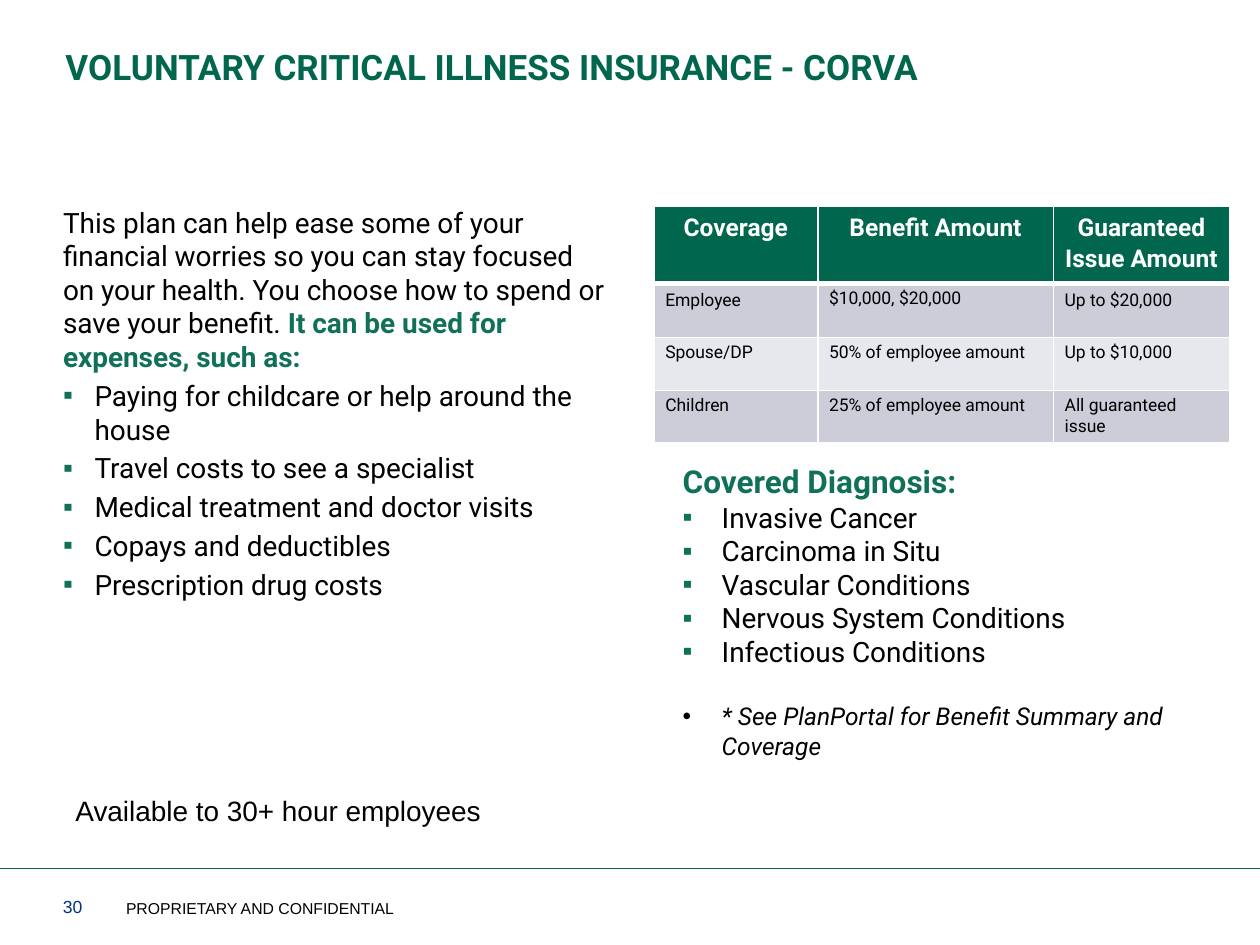
from dataclasses import dataclass
from typing import Optional

from lxml.etree import SubElement
from pptx import Presentation
from pptx.dml.color import RGBColor
from pptx.enum.shapes import MSO_CONNECTOR
from pptx.enum.text import MSO_ANCHOR, PP_ALIGN
from pptx.oxml.ns import qn
from pptx.util import Inches, Pt


@dataclass(frozen=True)
class Theme:
    font: str = "Roboto"
    plain_font: str = "Arial"
    green: str = "00664D"
    accent: str = "117158"
    blue: str = "003087"
    black: str = "000000"
    white: str = "FFFFFF"
    bands: tuple = ("CCCDD9", "E7E8ED")
    title: float = 20
    heading: float = 18
    body: float = 16
    note: float = 14
    small: float = 10
    footer: float = 9


THEME = Theme()


@dataclass(frozen=True)
class Span:
    text: str
    color: str = THEME.black
    bold: bool = False


@dataclass(frozen=True)
class Line:
    spans: tuple
    size: float = THEME.body
    font: str = THEME.font
    italic: bool = False
    bullet: str = ""
    bullet_color: Optional[str] = None
    indent: float = 0
    space_before: float = 0
    line_spacing: Optional[float] = None
    align: Optional[PP_ALIGN] = None


def add_bullet(para, line: Line) -> None:
    properties = para._p.get_or_add_pPr()
    properties.set("marL", str(Inches(line.indent)))
    properties.set("indent", str(-Inches(line.indent)))
    if line.bullet_color:
        color = SubElement(properties, qn("a:buClr"))
        SubElement(color, qn("a:srgbClr"), val=line.bullet_color)
    SubElement(properties, qn("a:buFont"), typeface=THEME.plain_font)
    SubElement(properties, qn("a:buChar"), char=line.bullet)


def write_lines(frame, lines: list[Line]) -> None:
    frame.word_wrap = True
    for index, line in enumerate(lines):
        para = frame.add_paragraph() if index else frame.paragraphs[0]
        if line.bullet:
            add_bullet(para, line)
        if line.space_before:
            para.space_before = Pt(line.space_before)
        if line.line_spacing:
            para.line_spacing = line.line_spacing
        para.alignment = line.align
        para.font.name = line.font
        para.font.size = Pt(line.size)
        para.font.italic = line.italic
        for span in line.spans:
            run = para.add_run()
            run.text = span.text
            run.font.bold = span.bold
            run.font.color.rgb = RGBColor.from_string(span.color)


def add_text(page, left: float, top: float, width: float, height: float,
             lines: list[Line], inset_left: float = 0, inset_right: float = 0,
             anchor: MSO_ANCHOR = MSO_ANCHOR.TOP) -> None:
    box = page.shapes.add_textbox(Inches(left), Inches(top), Inches(width), Inches(height))
    frame = box.text_frame
    frame.margin_left, frame.margin_right = Inches(inset_left), Inches(inset_right)
    frame.margin_top = frame.margin_bottom = Inches(0.05)
    frame.vertical_anchor = anchor
    write_lines(frame, lines)


def add_borders(cell, bottom_width: float) -> None:
    properties = cell._tc.get_or_add_tcPr()
    for side, width in (("L", 1), ("R", 1), ("T", 1), ("B", bottom_width)):
        border = SubElement(properties, qn(f"a:ln{side}"), w=str(Pt(width)))
        fill = SubElement(border, qn("a:solidFill"))
        SubElement(fill, qn("a:srgbClr"), val=THEME.white)


def add_coverage_table(page, rows: list[tuple], widths: tuple, heights: tuple) -> None:
    table = page.shapes.add_table(
        len(rows), len(widths), Inches(5.19), Inches(1.64),
        Inches(sum(widths)), Inches(sum(heights))).table
    for column, width in zip(table.columns, widths):
        column.width = Inches(width)
    for row_index, (row, height) in enumerate(zip(rows, heights)):
        table.rows[row_index].height = Inches(height)
        header = row_index == 0
        color = THEME.green if header else THEME.bands[(row_index - 1) % 2]
        for column_index, text in enumerate(row):
            cell = table.cell(row_index, column_index)
            cell.margin_left = cell.margin_right = Inches(0.09)
            cell.margin_top = cell.margin_bottom = Inches(0.04)
            add_borders(cell, 3 if header else 1)
            cell.fill.solid()
            cell.fill.fore_color.rgb = RGBColor.from_string(color)
            loose = header or (row_index == 1 and column_index != 1)
            write_lines(cell.text_frame, [Line(
                (Span(text, THEME.white if header else THEME.black, header),),
                THEME.note if header else THEME.small,
                line_spacing=1.07 if loose else None,
                align=PP_ALIGN.CENTER if header else PP_ALIGN.LEFT)])


def add_footer(page) -> None:
    rule = page.shapes.add_connector(
        MSO_CONNECTOR.STRAIGHT, Inches(0), Inches(6.89), Inches(10), Inches(6.89))
    rule.line.color.rgb = RGBColor.from_string(THEME.green)
    rule.line.width = Pt(0.5)
    SubElement(rule._element.spPr, qn("a:effectLst"))
    add_text(page, 0.5, 7.08, 0.54, 0.25,
             [Line((Span("30", THEME.blue),), THEME.small, THEME.plain_font)],
             anchor=MSO_ANCHOR.BOTTOM)
    add_text(page, 1, 7.08, 2.35, 0.25,
             [Line((Span("PROPRIETARY AND CONFIDENTIAL"),), THEME.footer, THEME.plain_font)],
             anchor=MSO_ANCHOR.BOTTOM)


def bullet_lines(texts: tuple, indent: float, space_before: float = 0) -> list[Line]:
    return [Line((Span(text),), bullet="▪", bullet_color=THEME.accent,
                 indent=indent, space_before=space_before) for text in texts]


EXPENSES = ("Paying for childcare or help around the house",
            "Travel costs to see a specialist",
            "Medical treatment and doctor visits",
            "Copays and deductibles",
            "Prescription drug costs")
DIAGNOSES = ("Invasive Cancer", "Carcinoma in Situ", "Vascular Conditions",
             "Nervous System Conditions", "Infectious Conditions")
COVERAGE = [("Coverage", "Benefit Amount", "Guaranteed Issue Amount"),
            ("Employee", "$10,000, $20,000", "Up to $20,000"),
            ("Spouse/DP", "50% of employee amount", "Up to $10,000"),
            ("Children", "25% of employee amount", "All guaranteed issue")]


def main() -> None:
    deck = Presentation()
    deck.slide_width, deck.slide_height = Inches(10), Inches(7.5)
    page = deck.slides.add_slide(deck.slide_layouts[6])

    add_footer(page)
    add_text(page, 0.52, 0.31, 9, 0.39, [Line(
        (Span("VOLUNTARY CRITICAL ILLNESS INSURANCE - CORVA", THEME.green, True),),
        THEME.title)])
    intro = Line((
        Span("This plan can help ease some of your financial worries so you can stay "
             "focused on your health. You choose how to spend or save your benefit. "),
        Span("It can be used for expenses, such as:", THEME.accent, True)))
    add_text(page, 0.5, 1.58, 4.42, 4.32,
             [intro, *bullet_lines(EXPENSES, 0.25, 3)], inset_right=0.1)
    add_coverage_table(page, COVERAGE, (1.3, 1.87, 1.4), (0.61, 0.43, 0.42, 0.39))
    heading = Line((Span("Covered Diagnosis:", THEME.accent, True),), THEME.heading)
    note = Line((Span("* See PlanPortal for Benefit Summary and Coverage"),), THEME.note,
                italic=True, bullet="•", indent=0.31, space_before=19)
    add_text(page, 5.32, 3.62, 4.2, 2.86,
             [heading, *bullet_lines(DIAGNOSES, 0.31), note], 0.1, 0.1)
    add_text(page, 0.5, 6.25, 4.09, 0.37,
             [Line((Span("Available to 30+ hour employees"),), font=THEME.plain_font)],
             0.1, 0.1)

    deck.save("out.pptx")


if __name__ == "__main__":
    main()
